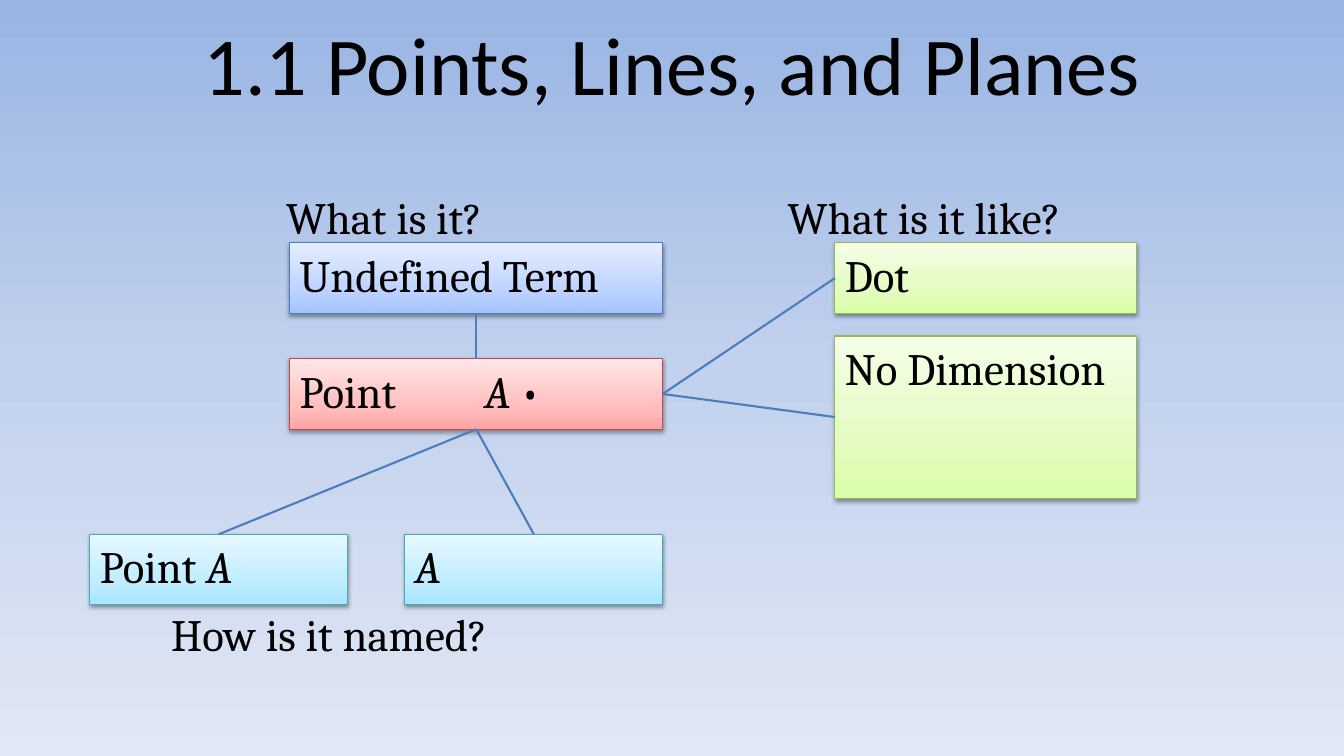
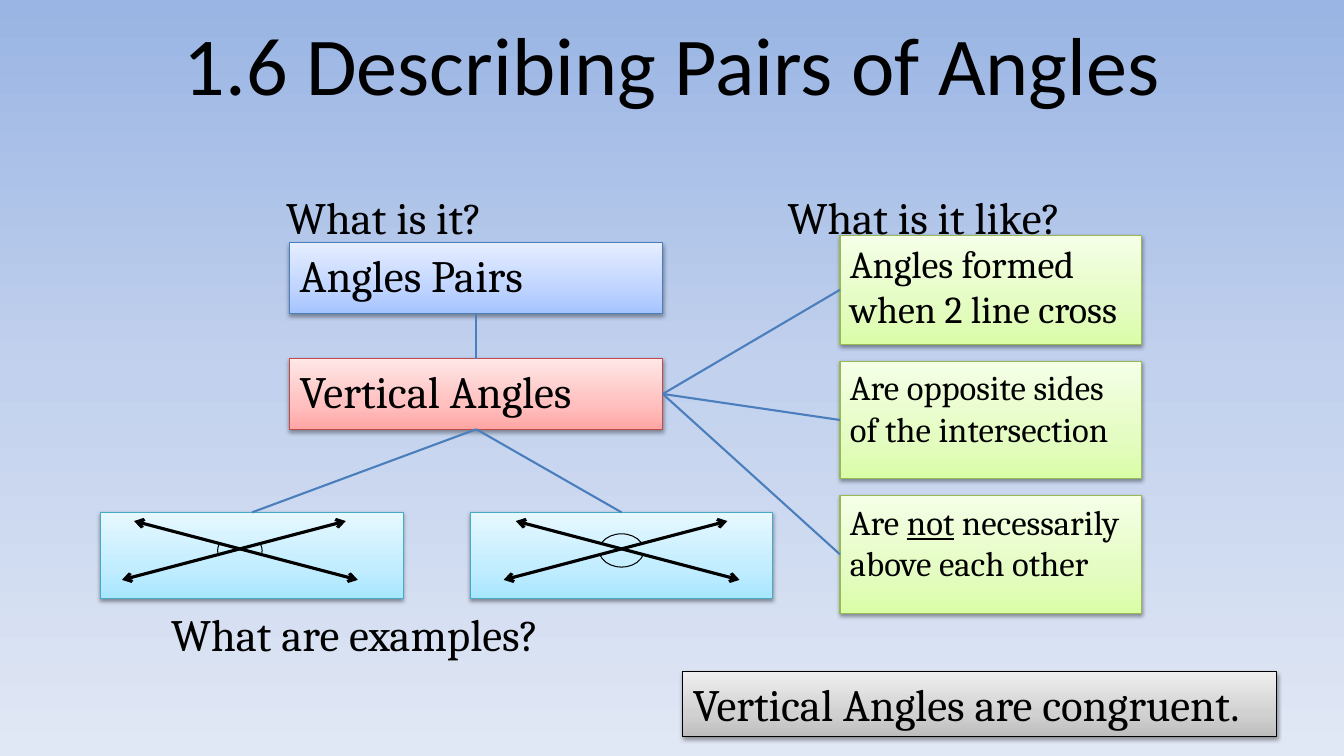
from dataclasses import dataclass

from lxml import etree
from pptx import Presentation
from pptx.dml.color import RGBColor
from pptx.enum.shapes import MSO_CONNECTOR, MSO_SHAPE
from pptx.enum.text import MSO_ANCHOR, PP_ALIGN
from pptx.oxml.ns import qn
from pptx.util import Inches, Pt

RECTANGLE, ARC = MSO_SHAPE.RECTANGLE, MSO_SHAPE.ARC
STRAIGHT = MSO_CONNECTOR.STRAIGHT
TOP, MIDDLE = MSO_ANCHOR.TOP, MSO_ANCHOR.MIDDLE
CENTER = PP_ALIGN.CENTER
TOP_SIDE, LEFT_SIDE, BOTTOM_SIDE, RIGHT_SIDE = range(4)
TITLE_ONLY = 5

SLIDE_WIDTH, SLIDE_HEIGHT = Inches(13.33), Inches(7.5)
COLUMNS, ROWS = 160, 90


@dataclass(frozen=True)
class Paint:
    line: str
    stops: tuple


@dataclass(frozen=True)
class Theme:
    title_font: str = "Calibri"
    text_font: str = "Cambria"
    title_size: float = 58.7
    text_size: float = 32
    medium_size: float = 27.2
    small_size: float = 24.8
    ink: str = "000000"
    link: str = "4B7EBC"
    outline: float = 0.75
    link_width: float = 1.5
    ray_width: float = 2.25
    background: tuple = ((0, "9AB5E4"), (50, "C2D1ED"), (100, "E1E8F5"))
    blue: Paint = Paint("4B7EBC", ((0, "A4C4FF"), (35, "BFD4FF"), (100, "E6EEFF")))
    red: Paint = Paint("BF4C48", ((0, "FFA6A5"), (35, "FFC0BF"), (100, "FFE7E7")))
    green: Paint = Paint("98B955", ((0, "DAFDA7"), (35, "E4FCC2"), (100, "F5FFE7")))
    aqua: Paint = Paint("46AAC5", ((0, "A7E6FF"), (35, "C1EDFF"), (100, "E7F8FF")))
    gray: Paint = Paint("000000", ((0, "BDBDBD"), (35, "D1D1D1"), (100, "EEEEEE")))


THEME = Theme()


def across(columns):
    return round(SLIDE_WIDTH * columns / COLUMNS)


def down(rows):
    return round(SLIDE_HEIGHT * rows / ROWS)


@dataclass(frozen=True)
class Box:
    """A region measured in grid columns and rows."""
    left: float
    top: float
    width: float
    height: float

    def place(self):
        return across(self.left), down(self.top), across(self.width), down(self.height)


TITLE = Box(0, 0, 160, 15)
CATEGORY = Box(34.5, 28.9, 44.4, 8.4)
CONCEPT = Box(34.5, 42.7, 44.4, 8.4)
CATEGORY_HEADING = Box(32.9, 22, 46, 7.7)
TRAIT_HEADING = Box(92.6, 22, 46, 7.7)
EXAMPLE_HEADING = Box(19.2, 71.6, 85.3, 7.7)
SUMMARY = Box(81.3, 80, 70.7, 7.7)
CONCEPT_TAB = 22


def add_xml(parent, tag, **attributes):
    values = {name: str(value) for name, value in attributes.items()}
    return etree.SubElement(parent, qn(tag), values)


def set_gradient(fill, owner, stops, angle):
    fill.gradient()
    fill.gradient_angle = angle
    stop_list = next(owner.iter(qn("a:gsLst")))
    for stop in list(stop_list):
        stop_list.remove(stop)
    for position, color in stops:
        stop = add_xml(stop_list, "a:gs", pos=position * 1000)
        add_xml(stop, "a:srgbClr", val=color)


def set_line(shape, color, width):
    shape.line.color.rgb = RGBColor.from_string(color)
    shape.line.width = Pt(width)


def set_font(para, name, size):
    para.font.name = name
    para.font.size = Pt(size)
    para.font.color.rgb = RGBColor.from_string(THEME.ink)


def write(shape, spans, size=THEME.text_size, tab=None):
    """Fill a shape with one paragraph; a span is text or (text, style)."""
    frame = shape.text_frame
    frame.word_wrap = True
    frame.vertical_anchor = TOP
    para = frame.paragraphs[0]
    para.alignment = PP_ALIGN.LEFT
    if tab:
        tabs = add_xml(para._p.get_or_add_pPr(), "a:tabLst")
        add_xml(tabs, "a:tab", pos=across(tab), algn="l")
    set_font(para, THEME.text_font, size)
    for item in spans:
        text, style = (item, None) if isinstance(item, str) else item
        span = para.add_run()
        span.text = text
        if style:
            setattr(span.font, style, True)


def add_heading(page, box, text):
    write(page.shapes.add_textbox(*box.place()), [text])


def add_card(page, box, paint, spans=(), **text_options):
    card = page.shapes.add_shape(RECTANGLE, *box.place())
    set_gradient(card.fill, card._element, paint.stops, 90)
    set_line(card, paint.line, THEME.outline)
    card.shadow.inherit = False
    effects = next(card._element.iter(qn("a:effectLst")))
    shadow = add_xml(effects, "a:outerShdw", blurRad=Pt(3.1), dist=Pt(1.6),
                     dir=5400000, rotWithShape=0)
    color = add_xml(shadow, "a:srgbClr", val="000000")
    add_xml(color, "a:alpha", val=38000)
    if spans:
        write(card, spans, **text_options)
    return card


def add_line(page, start, end, color, width):
    line = page.shapes.add_connector(STRAIGHT, *start, *end)
    set_line(line, color, width)
    add_xml(line._element.spPr, "a:effectLst")
    return line


def join(page, first, first_side, second, second_side):
    line = add_line(page, (0, 0), (0, 0), THEME.link, THEME.link_width)
    line.begin_connect(first, first_side)
    line.end_connect(second, second_side)


def add_crossing(page, box, center_share, arcs):
    """Draw two crossing double-headed lines and the marked angles in a box."""
    center = box.left + box.width * center_share
    middle = box.top + box.height * 0.44
    reach, rise, shift = box.width * 0.37, box.height * 0.34, box.width * 0.02
    arc_width, arc_height = box.width * 0.147, box.height * 0.385
    for slope in (-1, 1):
        x = center + slope * shift
        line = add_line(page,
                        (across(x - reach), down(middle - slope * rise)),
                        (across(x + reach), down(middle + slope * rise)),
                        THEME.ink, THEME.ray_width)
        outline = next(line._element.iter(qn("a:ln")))
        for end in ("a:headEnd", "a:tailEnd"):
            add_xml(outline, end, type="arrow")
    arc_box = Box(center - arc_width / 2, middle - arc_height / 2, arc_width, arc_height)
    for angles in arcs:
        arc = page.shapes.add_shape(ARC, *arc_box.place())
        arc.fill.background()
        arc.shadow.inherit = False
        set_line(arc, THEME.ink, THEME.outline)
        for index, degrees in enumerate(angles):
            arc.adjustments[index] = degrees * 0.6


def add_concept_map(deck, title, category, concept, example_heading):
    """Add a page with its title, headings and two central cards."""
    page = deck.slides.add_slide(deck.slide_layouts[TITLE_ONLY])
    heading = page.shapes.title
    heading.left, heading.top, heading.width, heading.height = TITLE.place()
    heading.text_frame.text = title
    heading.text_frame.vertical_anchor = MIDDLE
    para = heading.text_frame.paragraphs[0]
    para.alignment = CENTER
    set_font(para, THEME.title_font, THEME.title_size)
    hub = add_card(page, CONCEPT, THEME.red, concept, tab=CONCEPT_TAB)
    join(page, add_card(page, CATEGORY, THEME.blue, [category]), BOTTOM_SIDE, hub, TOP_SIDE)
    add_heading(page, CATEGORY_HEADING, "What is it?")
    add_heading(page, TRAIT_HEADING, "What is it like?")
    add_heading(page, EXAMPLE_HEADING, example_heading)
    return page, hub


def add_traits(page, hub, left, top, gap, traits):
    """Stack the trait cards; each trait is (height, size, spans)."""
    for height, size, spans in traits:
        card = add_card(page, Box(left, top, 35.9, height), THEME.green, spans, size=size)
        join(page, hub, RIGHT_SIDE, card, LEFT_SIDE)
        top += height + gap


def add_examples(page, hub, first, gap, contents):
    """Set example cards side by side and return their boxes."""
    boxes = [Box(first.left + index * (first.width + gap), first.top, first.width, first.height)
             for index in range(len(contents))]
    for box, spans in zip(boxes, contents):
        card = add_card(page, box, THEME.aqua, spans)
        join(page, hub, BOTTOM_SIDE, card, TOP_SIDE)
    return boxes


def add_points_page(deck):
    page, hub = add_concept_map(
        deck, "1.1 Points, Lines, and Planes", "Undefined Term",
        ["Point\t", ("A", "italic"), " •"], "How is it named?")
    add_examples(page, hub, Box(10.7, 63.6, 30.7, 8.4), 6.8,
                 [["Point ", ("A", "italic")], [("A", "italic")]])
    add_traits(page, hub, 99.4, 28.9, 2.7, [
        (8.4, THEME.text_size, ["Dot"]),
        (19.3, THEME.text_size, ["No Dimension"]),
    ])


def add_angles_page(deck):
    page, hub = add_concept_map(
        deck, "1.6 Describing Pairs of Angles", "Angles Pairs",
        ["Vertical Angles"], "What are examples?")
    add_traits(page, hub, 100, 28, 2, [
        (13, THEME.medium_size, ["Angles formed when 2 line cross"]),
        (14, THEME.small_size, ["Are opposite sides of the intersection"]),
        (14, THEME.small_size, ["Are ", ("not", "underline"), " necessarily above each other"]),
    ])
    side_box, upright_box = add_examples(page, hub, Box(12, 61, 36, 10.3), 8, [(), ()])
    add_crossing(page, side_box, 0.46, [(345, 15), (165, 195)])
    add_crossing(page, upright_box, 0.5, [(195, 345), (15, 165)])
    add_card(page, SUMMARY, THEME.gray, ["Vertical Angles are congruent."])


def main():
    deck = Presentation()
    deck.slide_width, deck.slide_height = SLIDE_WIDTH, SLIDE_HEIGHT
    master = deck.slide_master
    set_gradient(master.background.fill, master.element, THEME.background, 270)
    add_points_page(deck)
    add_angles_page(deck)
    deck.save("out.pptx")


if __name__ == "__main__":
    main()
